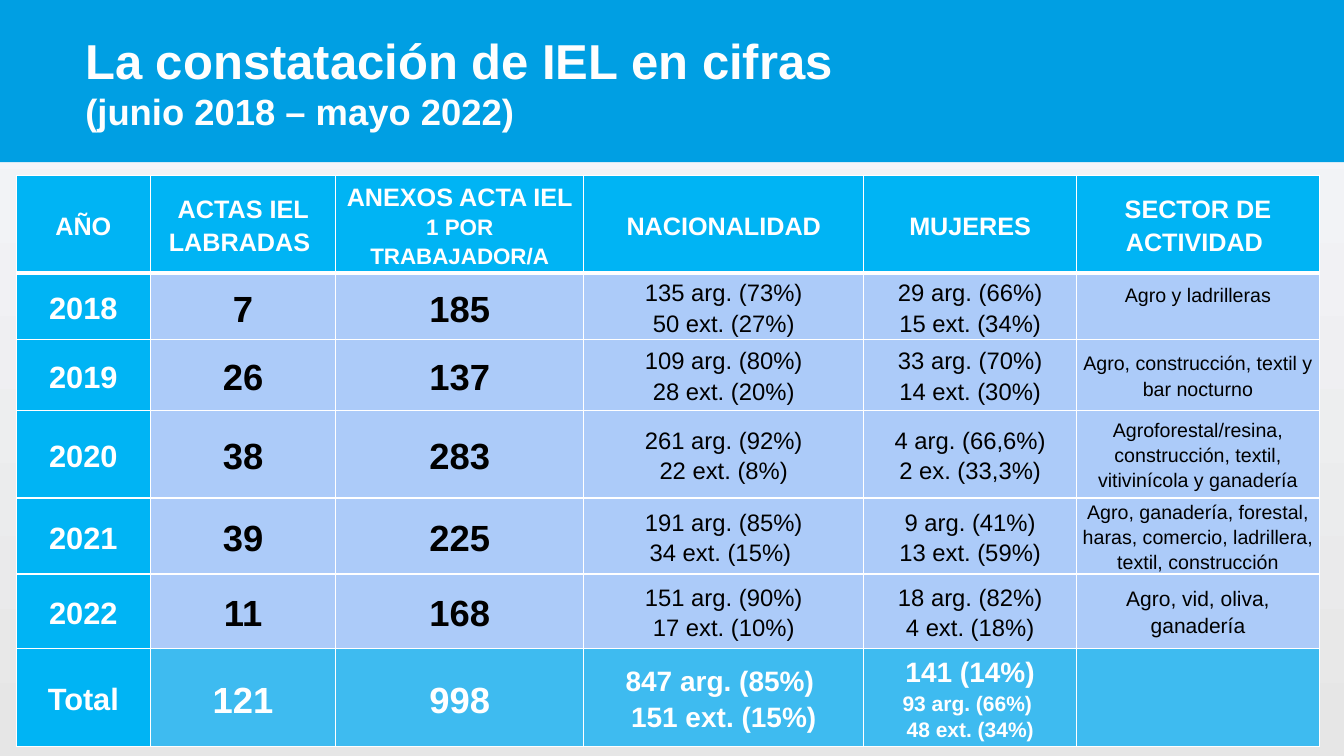
from pptx import Presentation
from pptx.dml.color import RGBColor
from pptx.enum.shapes import MSO_SHAPE
from pptx.enum.text import MSO_ANCHOR, PP_ALIGN
from pptx.oxml import parse_xml
from pptx.oxml.ns import nsdecls
from pptx.util import Cm, Pt

COLORS = {
    "banner": "009FE3", "header": "00B4F4", "body": "ACCBF9", "total": "3EBBF0",
    "white": "FFFFFF", "title": "FEFEFE", "black": "000000",
    "sky": "F6F7FB", "ground": "E6E6E6",
}
FONT = "Arial"
COLUMN_WIDTHS = [3.38, 4.67, 6.25, 7.06, 5.36, 6.12]
ROW_HEIGHTS = [2.46, 1.68, 1.78, 2.21, 1.88, 1.88, 2.46]
ROWS = [
    ["AÑO", "ACTAS IEL LABRADAS ", "ANEXOS ACTA IEL\n1 POR TRABAJADOR/A",
     "NACIONALIDAD", "MUJERES", "SECTOR DE ACTIVIDAD "],
    ["2018", "7", "185", "135 arg. (73%)\n50 ext. (27%)",
     "29 arg. (66%)\n15 ext. (34%)", "Agro y ladrilleras"],
    ["2019", "26", "137", "109 arg. (80%)\n28 ext. (20%)",
     "33 arg. (70%)\n14 ext. (30%)", "Agro, construcción, textil y bar nocturno"],
    ["2020", "38", "283", "261 arg. (92%)\n22 ext. (8%)",
     "4 arg. (66,6%)\n2 ex. (33,3%)",
     "Agroforestal/resina, construcción, textil, vitivinícola y ganadería"],
    ["2021", "39", "225", "191 arg. (85%)\n34 ext. (15%) ",
     "9 arg. (41%)\n13 ext. (59%)",
     "Agro, ganadería, forestal, haras, comercio, ladrillera, textil, construcción"],
    ["2022", "11", "168", "151 arg. (90%)\n17 ext. (10%)",
     "18 arg. (82%)\n4 ext. (18%)", "Agro, vid, oliva, ganadería"],
    ["Total", "121", "998", "847 arg. (85%) \n151 ext. (15%)",
     "141 (14%)\n93 arg. (66%) \n48 ext. (34%)", ""],
]
LAST_ROW = len(ROWS) - 1
HEADER_SIZE = 18
BODY_SIZES = [22, 26, 26, 17, 17, 14]
TOTAL_SIZES = [22, 26, 26, 20, 20, 14]
LINE_SIZES = {(0, 2): [18, 16], (5, 5): [15], (LAST_ROW, 4): [20, 15, 15]}


def rgb(name):
    """Return the palette colour with the given name."""
    return RGBColor.from_string(COLORS[name])


def style_run(span, size, color, bold=True):
    """Set the font of one run."""
    span.font.name = FONT
    span.font.size = Pt(size)
    span.font.bold = bold
    span.font.color.rgb = rgb(color)


def paint_background(page):
    """Fill the page with a vertical gradient."""
    fill = page.background.fill
    fill.gradient()
    fill.gradient_angle = 270
    for stop, name, position in zip(fill.gradient_stops, ("sky", "ground"), (0.03, 1)):
        stop.color.rgb = rgb(name)
        stop.position = position


def add_banner(page, width):
    """Draw the coloured band behind the title."""
    banner = page.shapes.add_shape(MSO_SHAPE.RECTANGLE, 0, 0, width, Cm(4.09))
    banner.shadow.inherit = False
    banner.fill.solid()
    banner.fill.fore_color.rgb = rgb("banner")
    banner.line.fill.background()


def add_title(page):
    """Write the title and its period on two lines."""
    box = page.shapes.add_textbox(Cm(1.9), Cm(0.71), Cm(30.33), Cm(2.69))
    frame = box.text_frame
    frame.word_wrap = True
    frame.vertical_anchor = MSO_ANCHOR.MIDDLE
    para = frame.paragraphs[0]
    para.text = "La constatación de IEL en cifras\v(junio 2018 – mayo 2022)"
    for span, size in zip(para.runs, (35, 26)):
        style_run(span, size, "title")


def add_borders(cell, row):
    """Draw white cell borders, thicker under the header row."""
    properties = cell._tc.get_or_add_tcPr()
    widths = {"L": 1, "R": 1, "T": 3 if row == 1 else 1, "B": 3 if row == 0 else 1}
    for side, width in widths.items():
        properties.append(parse_xml(
            f'<a:ln{side} {nsdecls("a")} w="{Pt(width)}"><a:solidFill>'
            f'<a:srgbClr val="{COLORS["white"]}"/></a:solidFill></a:ln{side}>'))


def cell_colors(row, column):
    """Return the fill and text colours for a place in the table."""
    if row == 0 or column == 0:
        return "header", "white"
    if row == LAST_ROW:
        return "total", "white"
    return "body", "black"


def line_size(row, column, line):
    """Return the text size for one line of a cell."""
    if (row, column) in LINE_SIZES:
        return LINE_SIZES[row, column][line]
    if row == 0:
        return HEADER_SIZE
    return (TOTAL_SIZES if row == LAST_ROW else BODY_SIZES)[column]


def fill_cell(cell, row, column, text):
    """Write and format one table cell."""
    fill_color, text_color = cell_colors(row, column)
    add_borders(cell, row)
    cell.fill.solid()
    cell.fill.fore_color.rgb = rgb(fill_color)
    cell.vertical_anchor = MSO_ANCHOR.MIDDLE
    cell.margin_left = cell.margin_right = Cm(0.13)
    cell.margin_top = cell.margin_bottom = 0
    cell.text_frame.text = text
    bold = text_color == "white" or column < 3
    for line, para in enumerate(cell.text_frame.paragraphs):
        para.alignment = PP_ALIGN.CENTER
        para.line_spacing = 1.15
        for span in para.runs:
            style_run(span, line_size(row, column, line), text_color, bold)


def add_figures_table(page):
    """Build the table of yearly figures."""
    table = page.shapes.add_table(
        len(ROWS), len(COLUMN_WIDTHS), Cm(0.41), Cm(4.42),
        Cm(sum(COLUMN_WIDTHS)), Cm(sum(ROW_HEIGHTS))).table
    for column, width in zip(table.columns, COLUMN_WIDTHS):
        column.width = Cm(width)
    for row, height in zip(table.rows, ROW_HEIGHTS):
        row.height = Cm(height)
    for row, texts in enumerate(ROWS):
        for column, text in enumerate(texts):
            fill_cell(table.cell(row, column), row, column, text)
    table.cell(1, 5).margin_bottom = Cm(0.6)


def main():
    """Build the deck and save it."""
    deck = Presentation()
    deck.slide_width = Cm(33.87)
    deck.slide_height = Cm(19.05)
    page = deck.slides.add_slide(deck.slide_layouts[6])
    paint_background(page)
    add_banner(page, deck.slide_width)
    add_figures_table(page)
    add_title(page)
    deck.save("out.pptx")


if __name__ == "__main__":
    main()
